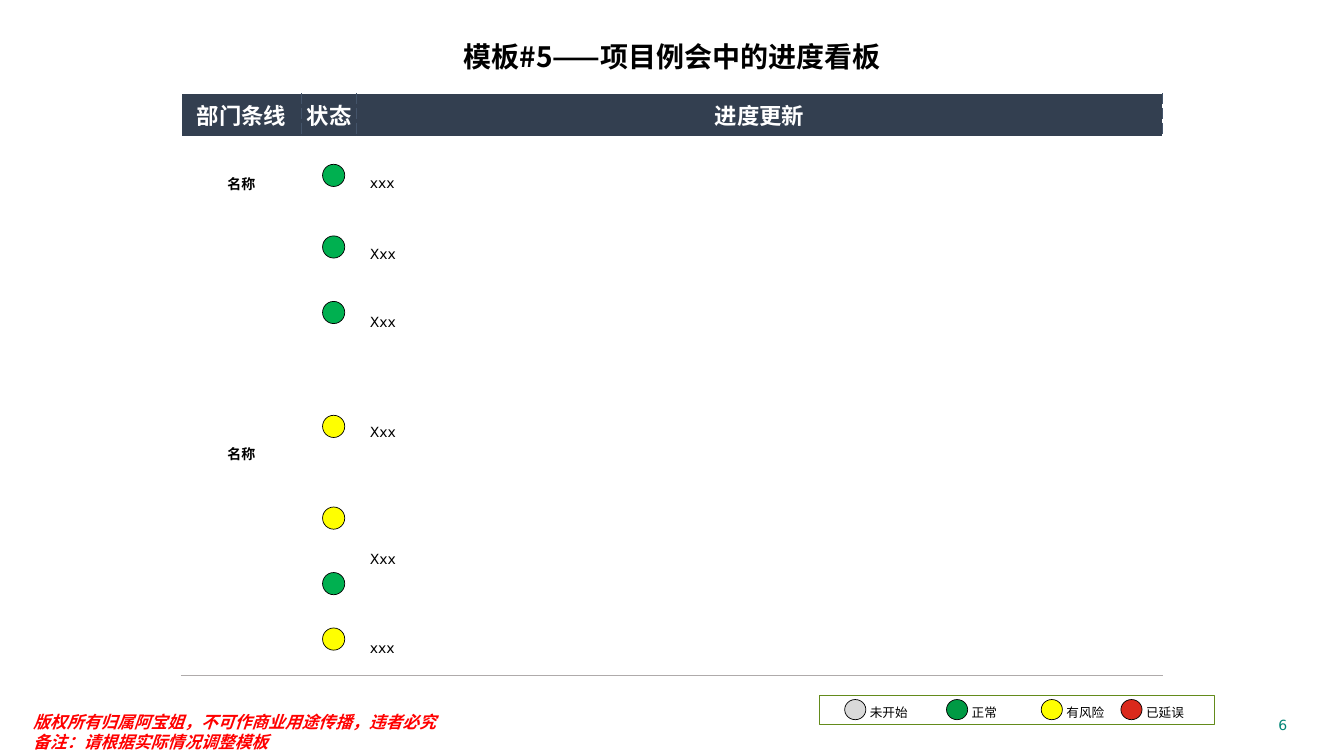
from lxml import etree
from pptx import Presentation
from pptx.dml.color import RGBColor
from pptx.enum.shapes import MSO_SHAPE
from pptx.enum.text import MSO_ANCHOR, PP_ALIGN
from pptx.oxml.ns import qn
from pptx.util import Inches, Pt

LEFT, CENTER, RIGHT = PP_ALIGN.LEFT, PP_ALIGN.CENTER, PP_ALIGN.RIGHT
TOP, MIDDLE = MSO_ANCHOR.TOP, MSO_ANCHOR.MIDDLE
OVAL, RECT = MSO_SHAPE.OVAL, MSO_SHAPE.RECTANGLE

BLACK = RGBColor(0x00, 0x00, 0x00)
WHITE = RGBColor(0xFF, 0xFF, 0xFF)
NAVY = RGBColor(0x33, 0x3F, 0x50)
SLATE = RGBColor(0x44, 0x54, 0x6A)
RULE = RGBColor(0xAF, 0xAB, 0xAB)
GREEN = RGBColor(0x00, 0xB0, 0x50)
YELLOW = RGBColor(0xFF, 0xFF, 0x00)
GREY = RGBColor(0xD9, 0xD9, 0xD9)
LEGEND_GREEN = RGBColor(0x00, 0x9A, 0x44)
LEGEND_RED = RGBColor(0xDA, 0x29, 0x1C)
LEGEND_LINE = RGBColor(0x63, 0x8B, 0x1B)
TEAL = RGBColor(0x00, 0x85, 0x76)
RED = RGBColor(0xFF, 0x00, 0x00)

BODY_FONT, HEAD_FONT = "DejaVu Sans", "Noto Sans CJK SC"


def grid(n):
    """Length of n grid units; the slide is 160 columns by 90 rows."""
    return Inches(n / 12)


def write(tf, text, size=10, color=BLACK, font=BODY_FONT, bold=False,
          italic=False, align=LEFT):
    for i, line in enumerate(text.split("\n")):
        p = tf.add_paragraph() if i else tf.paragraphs[0]
        p.alignment = align
        r = p.add_run()
        r.text = line
        r.font.size, r.font.name = Pt(size), font
        r.font.bold, r.font.italic = bold, italic
        r.font.color.rgb = color
        ea = etree.SubElement(r.font._element, qn("a:ea"))
        ea.set("typeface", HEAD_FONT)


def border(cell, side, color, width, dash="solid"):
    ln = etree.SubElement(cell._tc.get_or_add_tcPr(), qn("a:ln" + side))
    ln.set("w", str(Pt(width)))
    fill = etree.SubElement(ln, qn("a:solidFill"))
    etree.SubElement(fill, qn("a:srgbClr")).set("val", str(color))
    etree.SubElement(ln, qn("a:prstDash")).set("val", dash)


class Board:
    def __init__(self, prs):
        self.s = prs.slides.add_slide(prs.slide_layouts[6])

    def text(self, text, x, y, w, h, anchor=TOP, **style):
        tf = self.s.shapes.add_textbox(*map(grid, (x, y, w, h))).text_frame
        tf.word_wrap = True
        tf.vertical_anchor = anchor
        tf.margin_left = tf.margin_right = tf.margin_top = tf.margin_bottom = 0
        write(tf, text, **style)

    def shape(self, kind, x, y, w, h, fill, line=BLACK, width=0.5):
        sp = self.s.shapes.add_shape(kind, *map(grid, (x, y, w, h)))
        sp.shadow.inherit = False
        sp.fill.solid()
        sp.fill.fore_color.rgb = fill
        sp.line.color.rgb = line
        sp.line.width = Pt(width)

    def table(self, x, y, cols, rows):
        frame = self.s.shapes.add_table(
            len(rows), len(cols), *map(grid, (x, y, sum(cols), sum(rows))))
        table = frame.table
        table.first_row = table.horz_banding = False
        for col, w in zip(table.columns, cols):
            col.width = grid(w)
        for row, h in zip(table.rows, rows):
            row.height = grid(h)
        return table

    def cell(self, cell, text="", fill=WHITE, pad=0.04, indent=0, **style):
        cell.fill.solid()
        cell.fill.fore_color.rgb = fill
        cell.vertical_anchor = MIDDLE
        cell.margin_right = cell.margin_top = cell.margin_bottom = Inches(pad)
        cell.margin_left = Inches(pad + indent)
        if text:
            write(cell.text_frame, text, **style)


def progress_table(board):
    headers = ["部门条线", "状态", "进度更新"]
    updates = ["xxx", "Xxx", "Xxx", "Xxx", "Xxx", "xxx"]
    departments = {1: "名称", 2: "名称"}
    table = board.table(21.6, 11.16, [14.28, 6.6, 95.88],
                        [5.1, 11.16, 5.88, 10.32, 15.72, 14.64, 6.48])
    last = len(updates)
    for c, header in enumerate(headers):
        cell = table.cell(0, c)
        if c:
            border(cell, "L", SLATE, 0.5, "sysDash")
        border(cell, "R", SLATE, 0.5, "sysDash")
        board.cell(cell, header, NAVY, 0.05, size=16, color=WHITE,
                   font=HEAD_FONT, bold=True, align=CENTER)
    for r, update in enumerate(updates, 1):
        for c in range(len(headers)):
            if c or r in (1, 2, last):
                border(table.cell(r, c), "B", RULE, 1)
        board.cell(table.cell(r, 0), departments.get(r, ""), bold=True,
                   align=CENTER)
        board.cell(table.cell(r, 1))
        board.cell(table.cell(r, 2), update, indent=0.09)
    table.cell(2, 0).merge(table.cell(last, 0))


def legend(board):
    board.shape(RECT, 97.56, 82.8, 47.04, 3.48, WHITE, LEGEND_LINE, 1)
    for label, color, x in [("未开始", GREY, 100.56),
                            ("正常", LEGEND_GREEN, 112.68),
                            ("有风险", YELLOW, 123.96),
                            ("已延误", LEGEND_RED, 133.44)]:
        board.shape(OVAL, x, 83.28, 2.52, 2.4, color)
        board.text(label, x + 3, 83.88, 7, 1.8, MIDDLE, size=9)


def main():
    prs = Presentation()
    prs.slide_width, prs.slide_height = grid(160), grid(90)
    board = Board(prs)
    progress_table(board)
    for y, color in [(19.56, GREEN), (28.08, GREEN), (35.88, GREEN),
                     (49.44, YELLOW), (60.36, YELLOW), (68.16, GREEN),
                     (74.76, YELLOW)]:
        board.shape(OVAL, 38.4, y, 2.64, 2.64, color)
    legend(board)
    board.text("模板#5——项目例会中的进度看板", 47.88, 4.68, 64.32, 4.44,
               size=20, font=HEAD_FONT, bold=True, align=CENTER)
    board.text("版权所有归属阿宝姐，不可作商业用途传播，违者必究\n"
               "备注：请根据实际情况调整模板", 3.96, 84.72, 53.64, 4.8,
               size=12, color=RED, bold=True, italic=True)
    board.text("6", 117.12, 85.32, 36.12, 2.4, color=TEAL, align=RIGHT)
    prs.save("out.pptx")


if __name__ == "__main__":
    main()
